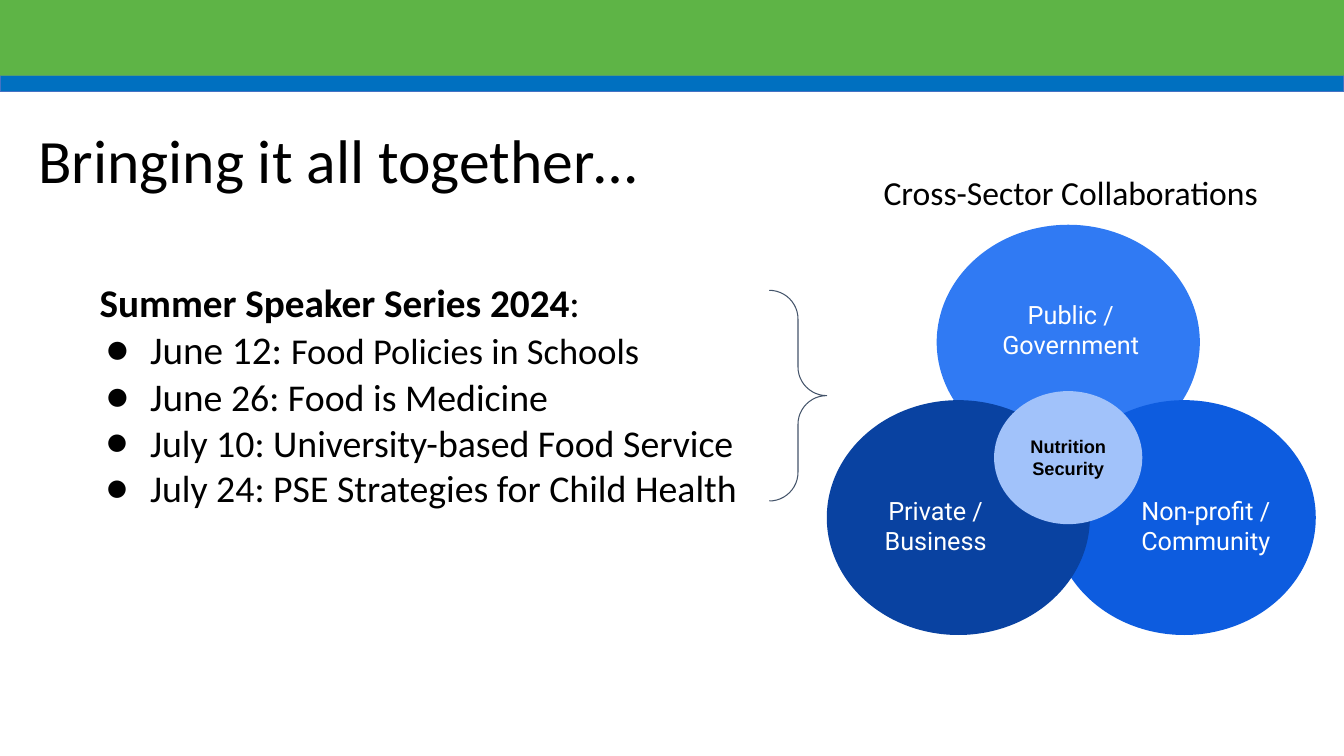
"""Build the closing slide on the summer speaker series and cross-sector work."""
from lxml import etree
from pptx import Presentation
from pptx import util as u
from pptx.dml.color import RGBColor
from pptx.enum import shapes, text
from pptx.oxml.ns import qn

PX = 9144
BLACK, WHITE = "000000", "FFFFFF"


def add_shape(parent, kind, box, fill=None, line=None, width=1):
    shape = parent.add_shape(kind, *[n * PX for n in box])
    shape.shadow.inherit = False
    if fill:
        shape.fill.solid()
        shape.fill.fore_color.rgb = RGBColor.from_string(fill)
    else:
        shape.fill.background()
    if line:
        shape.line.color.rgb = RGBColor.from_string(line)
        shape.line.width = u.Pt(width)
    else:
        shape.line.fill.background()
    return shape


def write(shape, words, size, color=BLACK, font="Calibri", bold=False, inset=10,
          align=text.PP_ALIGN.CENTER, anchor=text.MSO_ANCHOR.MIDDLE):
    frame = shape.text_frame
    frame.word_wrap = True
    frame.vertical_anchor = anchor
    frame.margin_left = frame.margin_right = inset * PX
    frame.margin_top = frame.margin_bottom = inset * PX
    para = frame.paragraphs[0]
    para.text = words
    para.alignment = align
    para.font.name = font
    para.font.size = u.Pt(size)
    para.font.bold = bold
    para.font.color.rgb = RGBColor.from_string(color)


deck = Presentation()
deck.slide_width, deck.slide_height = 1333 * PX, 750 * PX
page = deck.slides.add_slide(deck.slide_layouts[5])
RECT, OVAL = shapes.MSO_SHAPE.RECTANGLE, shapes.MSO_SHAPE.OVAL

add_shape(page.shapes, RECT, (0, 75, 1333, 16), "0070C0", "4472C4")
add_shape(page.shapes, RECT, (0, 0, 1333, 75), "5EB446")

title = page.shapes.title
title.left, title.top, title.width, title.height = [n * PX for n in (28, 124, 1261, 77)]
write(title, "Bringing it all together…", 44, align=text.PP_ALIGN.LEFT)
title.text_frame.margin_top = title.text_frame.margin_bottom = 5 * PX
title.text_frame.paragraphs[0].line_spacing = 0.9

series = [
    [("Summer Speaker Series 2024", 28), (":", 28)],
    [("June 12: ", 28), ("Food Policies in Schools", 26)],
    [("Jun", 28), ("e 26: Food is Medicine", 27)],
    [("July 10: University-based Food Service", 27)],
    [("July 24: PSE Strategies for Child Health", 27)],
]
agenda = page.shapes.add_textbox(*[n * PX for n in (89, 266, 747, 252)])
frame = agenda.text_frame
frame.word_wrap = True
frame.margin_left = frame.margin_right = frame.margin_top = frame.margin_bottom = 10 * PX
for row, parts in enumerate(series):
    para = frame.add_paragraph() if row else frame.paragraphs[0]
    if row:
        props = para._p.get_or_add_pPr()
        props.set("marL", str(50 * PX))
        props.set("indent", str(-44 * PX))
        bullet_color = etree.SubElement(props, qn("a:buClr"))
        etree.SubElement(bullet_color, qn("a:srgbClr"), val=BLACK)
        etree.SubElement(props, qn("a:buFont"), typeface="Calibri")
        etree.SubElement(props, qn("a:buChar"), char="●")
    para.font.name = "Calibri"
    para.font.color.rgb = RGBColor.from_string(BLACK)
    for words, size in parts:
        span = para.add_run()
        span.text = words
        span.font.size = u.Pt(size)
frame.paragraphs[0].runs[0].font.bold = True

brace = add_shape(page.shapes, shapes.MSO_SHAPE.RIGHT_BRACE, (763, 288, 57, 209),
                  line="44546A", width=0.75)
brace.adjustments[0] = brace.adjustments[1] = 0.5

heading = page.shapes.add_textbox(*[n * PX for n in (820, 161, 484, 77)])
write(heading, "Cross-Sector Collaborations", 24, anchor=text.MSO_ANCHOR.TOP)

venn = page.shapes.add_group_shape().shapes
sectors = [
    ("Public / Government", "307AF3", (929, 223), (972, 289)),
    ("Non-profit / Community", "0D5CDF", (1044, 397), (1106, 483)),
    ("Private / Business", "0942A1", (820, 397), (838, 483)),
]
for words, fill, circle_at, label_at in sectors:
    add_shape(venn, OVAL, (*circle_at, 261, 233), fill)
    label = venn.add_textbox(*[n * PX for n in (*label_at, 180, 76)])
    write(label, words, 18, WHITE, "Roboto", inset=13)

core = add_shape(venn, OVAL, (986, 388, 147, 132), "A1C2FA")
write(core, "Nutrition Security", 13, font="Arial", bold=True, inset=13)

deck.save("out.pptx")
